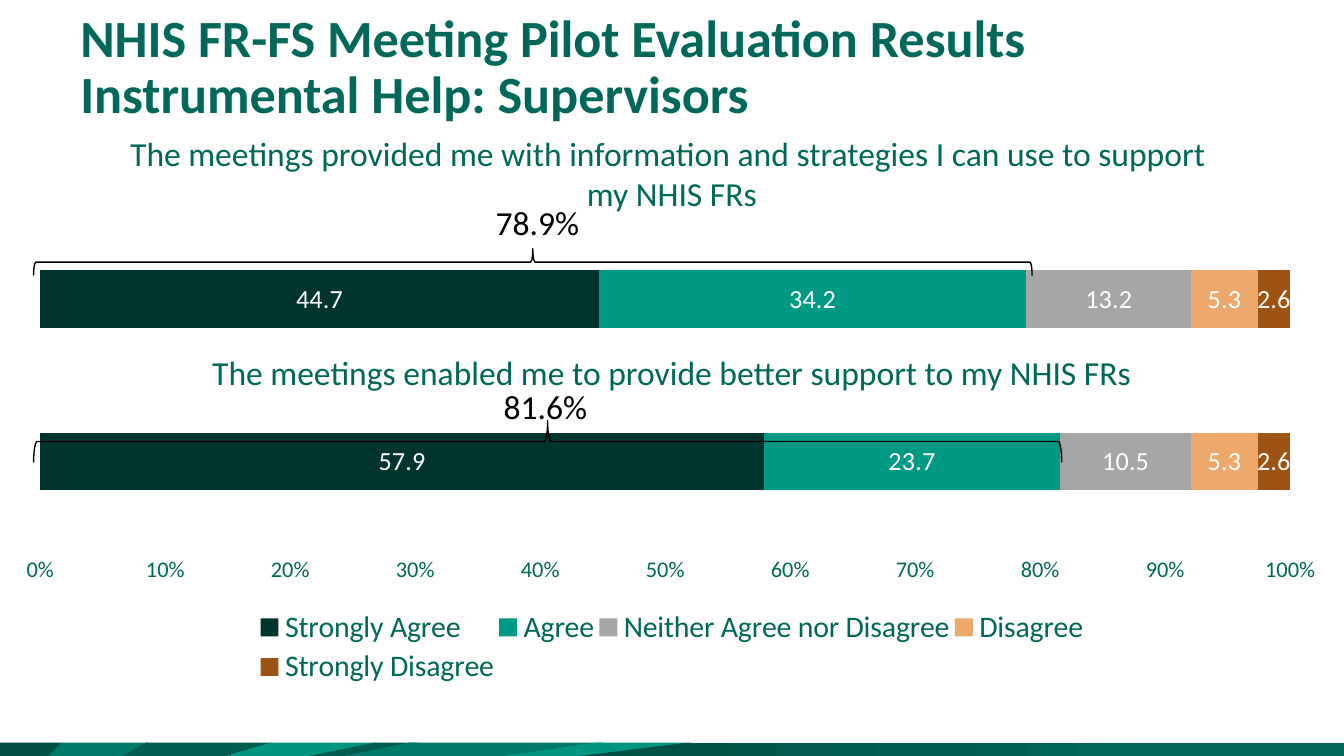
from pptx import Presentation
from pptx.chart.data import CategoryChartData
from pptx.dml.color import RGBColor
from pptx.enum.chart import XL_CHART_TYPE, XL_LABEL_POSITION, XL_LEGEND_POSITION, XL_TICK_MARK
from pptx.enum.shapes import MSO_SHAPE
from pptx.enum.text import MSO_ANCHOR, PP_ALIGN
from pptx.oxml import parse_xml
from pptx.oxml.ns import nsdecls
from pptx.util import Inches, Pt

FONT = "Calibri"
GREEN, BLACK, WHITE = "006858", "000000", "FFFFFF"
WIDTH = 10
HEIGHT = WIDTH * 9 / 16

# Name, colour, values (lower bar first)
ANSWERS = [
    ("Strongly Agree", "00342C", (57.9, 44.7)),
    ("Agree", "009A84", (23.7, 34.2)),
    ("Neither Agree nor Disagree", "A6A6A6", (10.5, 13.2)),
    ("Disagree", "EDA86C", (5.3, 5.3)),
    ("Strongly Disagree", "9C5314", (2.6, 2.6)),
]

# Colour, then x of top left, top right, bottom right, bottom left
FACETS = [
    ("005045", 0, 0.47, 0.39, 0),
    ("007A69", 0.46, 1.11, 0.92, 0.36),
    ("005C4F", 1.09, 2.03, 1.69, 0.91),
    ("009681", 2.02, 2.8, 2.34, 1.69),
    ("005C4F", 2.79, 3.11, 2.57, 2.3),
    ("007A69", 3.05, 4.5, 3.77, 2.56),
    ("009681", 4.44, 5.15, 4.35, 3.76),
    (GREEN, 5.14, 10, 10, 4.31),
]


def rgb(value):
    return RGBColor.from_string(value)


def style_font(font, size, color, bold=False):
    for name, value in {"name": FONT, "size": Pt(size), "bold": bold}.items():
        setattr(font, name, value)
    font.color.rgb = rgb(color)


def add_text(slide, box, lines, size, color, bold=False, **paragraph_format):
    frame = slide.shapes.add_textbox(*map(Inches, box)).text_frame
    frame.word_wrap = True
    for index, line in enumerate(lines):
        paragraph = frame.add_paragraph() if index else frame.paragraphs[0]
        for name, value in paragraph_format.items():
            setattr(paragraph, name, value)
        run = paragraph.add_run()
        run.text = line
        style_font(run.font, size, color, bold)
    return frame


def add_footer(slide, left, top, height):
    for color, top_left, top_right, bottom_right, bottom_left in FACETS:
        corners = [(top_left, 0), (top_right, 0),
                   (bottom_right, height), (bottom_left, height)]
        points = [(Inches(left + x), Inches(top + y)) for x, y in corners]
        builder = slide.shapes.build_freeform(*points[0])
        builder.add_line_segments(points[1:])
        facet = builder.convert_to_shape()
        facet.shadow.inherit = False
        facet.line.fill.background()
        facet.fill.solid()
        facet.fill.fore_color.rgb = rgb(color)
    # The last facet fades from dark to the main green
    facet.fill.gradient()
    facet.fill.gradient_angle = 0
    stops = [("005045", 0), (GREEN, 0.78)]
    for stop, (color, position) in zip(facet.fill.gradient_stops, stops):
        stop.color.rgb = rgb(color)
        stop.position = position


def add_title(slide, box):
    frame = add_text(
        slide, box,
        ["NHIS FR-FS Meeting Pilot Evaluation Results Instrumental Help: Supervisors"],
        28, GREEN, bold=True, line_spacing=Pt(30))
    frame.vertical_anchor = MSO_ANCHOR.BOTTOM


def layout_xml(x, y, w, h, inner=False):
    target = '<c:layoutTarget val="inner"/>' if inner else ""
    return parse_xml(
        f'<c:layout {nsdecls("c")}><c:manualLayout>{target}'
        '<c:xMode val="edge"/><c:yMode val="edge"/>'
        f'<c:x val="{x}"/><c:y val="{y}"/><c:w val="{w}"/><c:h val="{h}"/>'
        '</c:manualLayout></c:layout>')


def add_answer_chart(slide, box):
    data = CategoryChartData(number_format="0.0")
    data.categories = ["1", "2"]
    for name, _, values in ANSWERS:
        data.add_series(name, values)
    chart = slide.shapes.add_chart(
        XL_CHART_TYPE.BAR_STACKED_100, *map(Inches, box), data).chart
    style_font(chart.font, 10, GREEN)
    chart.has_title = False

    # Bars and their values
    plot = chart.plots[0]
    plot.gap_width, plot.overlap, plot.vary_by_categories = 181, 100, False
    label_format = {"show_value": True, "position": XL_LABEL_POSITION.CENTER,
                    "number_format": "0.0", "number_format_is_linked": False}
    for series, (_, color, _) in zip(plot.series, ANSWERS):
        series.format.fill.solid()
        series.format.fill.fore_color.rgb = rgb(color)
        labels = series.data_labels
        for name, value in label_format.items():
            setattr(labels, name, value)
        style_font(labels.font, 14, WHITE)

    # Axes
    chart.category_axis.visible = False
    axis = chart.value_axis
    axis_format = {"has_major_gridlines": False, "maximum_scale": 1,
                   "minimum_scale": 0, "major_unit": 0.1,
                   "major_tick_mark": XL_TICK_MARK.OUTSIDE}
    for name, value in axis_format.items():
        setattr(axis, name, value)
    axis.tick_labels.number_format = "0%"
    axis.tick_labels.number_format_is_linked = False
    axis.format.line.fill.background()
    style_font(axis.tick_labels.font, 12, GREEN)

    # Legend
    chart.has_legend = True
    legend = chart.legend
    legend.position = XL_LEGEND_POSITION.BOTTOM
    legend.include_in_layout = False
    style_font(legend.font, 16, GREEN)

    # Places of the plot and the legend, as shares of the chart
    plot_area = plot._element.getparent()
    for old in plot_area.findall("{*}layout"):
        plot_area.remove(old)
    plot_area.insert(0, layout_xml(0.03, 0.02, 0.93, 0.67, inner=True))
    for old in legend._element.findall("{*}layout"):
        legend._element.remove(old)
    legend._element.find("{*}legendPos").addnext(layout_xml(0.19, 0.82, 0.62, 0.17))


def add_brace(slide, left, top, width, height):
    # A right brace turned to point up; its frame is given before turning
    center_x, center_y = left + width / 2, top + height / 2
    brace = slide.shapes.add_shape(
        MSO_SHAPE.RIGHT_BRACE, Inches(center_x - height / 2),
        Inches(center_y - width / 2), Inches(height), Inches(width))
    brace.rotation = 270
    brace.shadow.inherit = False
    brace.fill.background()
    brace.line.color.rgb = rgb(BLACK)
    brace.line.width = Pt(0.75)


def add_question(slide, box, lines, brace_box, total, total_box):
    add_text(slide, box, lines, 18, GREEN, alignment=PP_ALIGN.CENTER)
    add_brace(slide, *brace_box)
    add_text(slide, total_box, [total], 18, BLACK)


def main():
    prs = Presentation()
    prs.slide_width, prs.slide_height = Inches(WIDTH), Inches(HEIGHT)
    slide = prs.slides.add_slide(prs.slide_layouts[6])
    add_footer(slide, 0, HEIGHT - 0.1, 0.1)
    add_title(slide, (0.5, 0, 9, 0.97))
    add_answer_chart(slide, (0, 1.55, WIDTH, 3.61))
    add_question(
        slide, (0, 0.94, WIDTH, 0.71),
        ["The meetings provided me with information and strategies I can use to support ",
         "my NHIS FRs"],
        (0.25, 1.85, 7.43, 0.2), "78.9%", (3.59, 1.45, 0.97, 0.4))
    add_question(
        slide, (0, 2.57, WIDTH, 0.4),
        ["The meetings enabled me to provide better support to my NHIS FRs"],
        (0.25, 3.13, 7.65, 0.31), "81.6%", (3.65, 2.82, 0.9, 0.4))
    prs.save("out.pptx")


if __name__ == "__main__":
    main()
